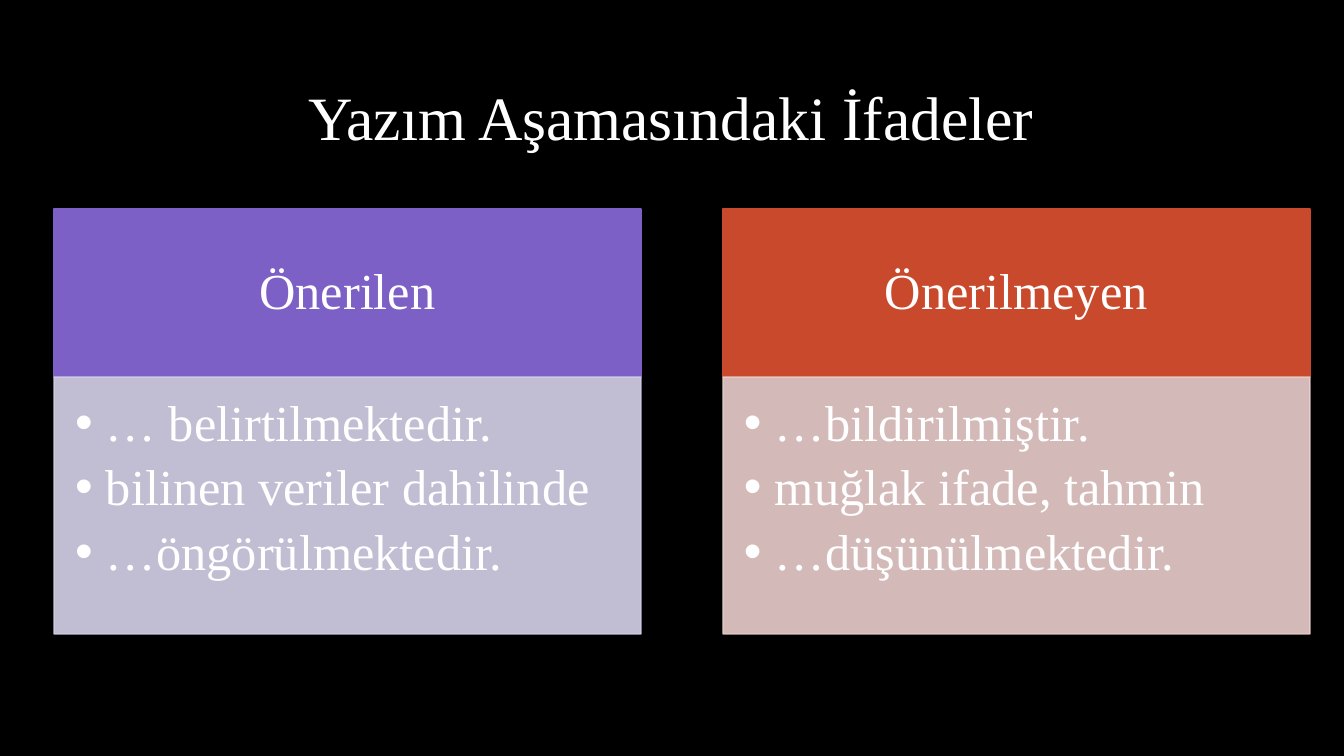
from lxml import etree
from pptx import Presentation
from pptx import util as u
from pptx.dml.color import RGBColor
from pptx.enum import text
from pptx.oxml.ns import qn

EMU_PER_PX = 914400 / 100.8
FONT = "Times New Roman"
COLORS = {
    "background": "000000",
    "text": "FFFFFF",
    "purple": "7C60C6",
    "pale purple": "D7D2EA",
    "red": "C9492C",
    "pale red": "EBCFCD",
}
COLUMNS = [
    ("Önerilen", "purple",
     ["… belirtilmektedir.", "bilinen veriler dahilinde", "…öngörülmektedir."]),
    ("Önerilmeyen", "red",
     ["…bildirilmiştir.", "muğlak ifade, tahmin", "…düşünülmektedir."]),
]
COLUMN_LEFT, COLUMN_STEP, COLUMN_WIDTH = 54, 669, 587
HEADER_TOP, HEADER_HEIGHT, LIST_HEIGHT = 209, 168, 257
LIST_INDENT = 31


def px(length):
    return u.Emu(round(length * EMU_PER_PX))


def fill_placeholder(shape, box, lines, size, insets, anchor, color=None, opacity=100):
    """Place the shape, write its lines and paint it, with opacity in percent."""
    shape.left, shape.top, shape.width, shape.height = map(px, box)
    frame = shape.text_frame
    frame.text = "\n".join(lines)
    frame.word_wrap = True
    frame.auto_size = text.MSO_AUTO_SIZE.NONE
    frame.vertical_anchor = anchor
    (frame.margin_left, frame.margin_top,
     frame.margin_right, frame.margin_bottom) = map(px, insets)
    for paragraph in frame.paragraphs:
        paragraph.line_spacing = 0.9
        paragraph.space_before = u.Pt(0)
        paragraph.font.name = FONT
        paragraph.font.size = u.Pt(size)
        paragraph.font.bold = False
        paragraph.font.color.rgb = RGBColor.from_string(COLORS["text"])
    if color:
        shape.line.width = u.Pt(1)
        for fill in (shape.fill, shape.line.fill):
            fill.solid()
            fill.fore_color.rgb = RGBColor.from_string(COLORS[color])
        if opacity < 100:
            for rgb in shape.element.spPr.iter(qn("a:srgbClr")):
                etree.SubElement(rgb, qn("a:alpha")).set("val", str(opacity * 1000))


presentation = Presentation()
presentation.slide_width, presentation.slide_height = px(1344), px(756)
comparison_layout = presentation.slide_layouts[4]
slide = presentation.slides.add_slide(comparison_layout)
background = slide.background.fill
background.solid()
background.fore_color.rgb = RGBColor.from_string(COLORS["background"])

title = slide.shapes.title
fill_placeholder(title, (92, 48, 1159, 146), ["Yazım Aşamasındaki İfadeler"], 44,
                 (10, 5, 10, 5), text.MSO_ANCHOR.MIDDLE)
title.text_frame.paragraphs[0].alignment = text.PP_ALIGN.CENTER

for index, (heading, color, phrases) in enumerate(COLUMNS):
    left = COLUMN_LEFT + index * COLUMN_STEP
    header = slide.placeholders[1 + 2 * index]
    phrase_list = slide.placeholders[2 + 2 * index]

    fill_placeholder(header, (left, HEADER_TOP, COLUMN_WIDTH, HEADER_HEIGHT), [heading], 36,
                     (28, 16, 28, 16), text.MSO_ANCHOR.MIDDLE, color)
    header.text_frame.paragraphs[0].alignment = text.PP_ALIGN.CENTER

    fill_placeholder(phrase_list,
                     (left, HEADER_TOP + HEADER_HEIGHT, COLUMN_WIDTH, LIST_HEIGHT),
                     phrases, 36, (21, 21, 28, 32), text.MSO_ANCHOR.TOP,
                     f"pale {color}", opacity=90)
    for paragraph in phrase_list.text_frame.paragraphs:
        paragraph.space_after = u.Pt(7)
        properties = paragraph._p.get_or_add_pPr()
        properties.set("marL", str(px(LIST_INDENT)))
        properties.set("indent", str(-px(LIST_INDENT)))
        etree.SubElement(properties, qn("a:buChar")).set("char", "•")
        # The schema wants the bullet before the default run properties.
        properties.append(properties.find(qn("a:defRPr")))

presentation.save("out.pptx")
